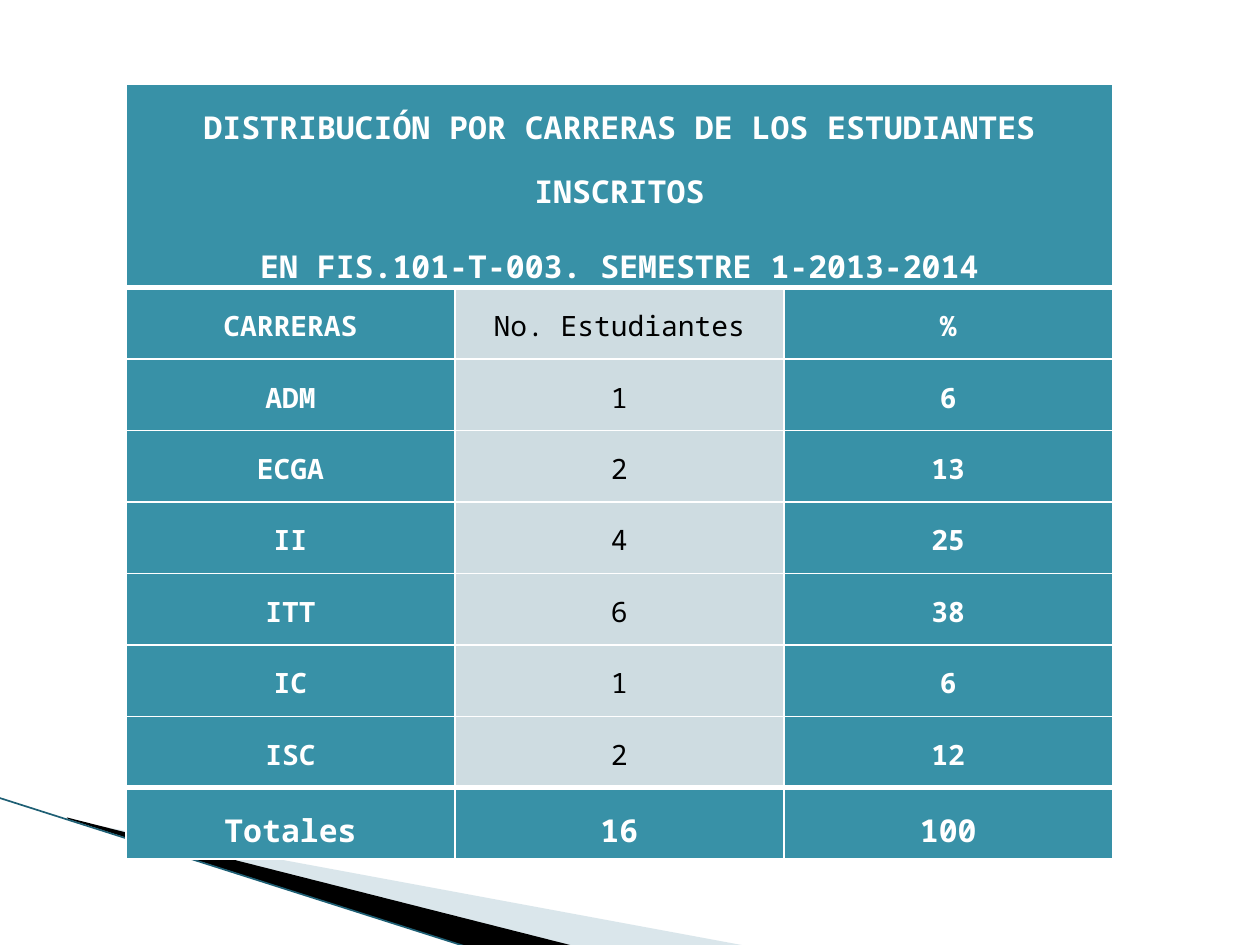
"""Build the slide with the table of enrolled students by degree programme."""
from lxml import etree
from pptx import Presentation
from pptx.dml.color import RGBColor
from pptx.enum.shapes import MSO_CONNECTOR as CONN
from pptx.enum.text import PP_ALIGN as ALIGN
from pptx.oxml.ns import qn
from pptx.util import Cm, Pt

TEAL, PALE, WHITE, BLACK = "3891A7", "CEDCE1", "FFFFFF", "000000"
TITLE = ("DISTRIBUCIÓN POR CARRERAS DE LOS ESTUDIANTES INSCRITOS\n"
         "EN FIS.101-T-003. SEMESTRE 1-2013-2014")
ROWS = [
    (TITLE, "", ""),
    ("CARRERAS", "No. Estudiantes", "%"),
    ("ADM", "1", "6"),
    ("ECGA", "2", "13"),
    ("II", "4", "25"),
    ("ITT", "6", "38"),
    ("IC", "1", "6"),
    ("ISC", "2", "12"),
    ("Totales", "16", "100"),
]
LAST = len(ROWS) - 1
WEDGES = [
    ("A3C2CE", 40, [(140, 1654), (1511, 1908), (1158, 1908), (140, 1651)]),
    (BLACK, 100, [(135, 1648), (1161, 1908), (945, 1910), (137, 1651)]),
]


def rgb(color):
    return RGBColor.from_string(color)


def add_border(cell, side, width):
    ln = etree.SubElement(cell._tc.get_or_add_tcPr(), qn(f"a:{side}"), w=str(Pt(width)))
    fill = etree.SubElement(ln, qn("a:solidFill"))
    etree.SubElement(fill, qn("a:srgbClr"), val=WHITE)


prs = Presentation()
prs.slide_width, prs.slide_height = Cm(25.4), Cm(19.05)
s = prs.slides.add_slide(prs.slide_layouts[6])

for color, alpha, points in WEDGES:
    fb = s.shapes.build_freeform(*points[0], scale=Cm(0.01))
    fb.add_line_segments(points[1:], close=True)
    sp = fb.convert_to_shape()
    sp.shadow.inherit = False
    sp.fill.solid()
    sp.fill.fore_color.rgb = rgb(color)
    sp.line.fill.background()
    if alpha < 100:
        clr = sp._element.spPr.find(".//" + qn("a:srgbClr"))
        etree.SubElement(clr, qn("a:alpha"), val=str(alpha * 1000))

edge = s.shapes.add_connector(CONN.STRAIGHT, Cm(-0.03), Cm(16.08), Cm(9.45), Cm(19.1))
edge.line.color.rgb = rgb("1E5F74")
edge.line.width = Pt(0.95)
etree.SubElement(edge._element.spPr, qn("a:effectLst"))

table = s.shapes.add_table(len(ROWS), 3, Cm(2.54), Cm(1.7), Cm(19.89), Cm(15.02)).table
for col in table.columns:
    col.width = Cm(6.63)
for i, row in enumerate(table.rows):
    row.height = Cm(1.44 if i else 3.5)
table.cell(0, 0).merge(table.cell(0, 2))

for i, texts in enumerate(ROWS):
    for j, text in enumerate(texts):
        cell = table.cell(i, j)
        plain = j == 1 and 0 < i < LAST
        cell.margin_left = cell.margin_right = Cm(0.18)
        cell.margin_top = cell.margin_bottom = 0
        add_border(cell, "lnL", 1)
        add_border(cell, "lnR", 1)
        add_border(cell, "lnT", 3 if i in (1, LAST) else 1)
        add_border(cell, "lnB", 3 if i in (0, LAST - 1) else 1)
        cell.fill.solid()
        cell.fill.fore_color.rgb = rgb(PALE if plain else TEAL)
        cell.text = text
        for p in cell.text_frame.paragraphs:
            p.alignment = ALIGN.CENTER
            p.line_spacing = 1.5
            p.space_after = Pt(6)
            p.font.name = "Noto Sans Mono"
            p.font.size = Pt(18 if i in (0, LAST) else 16)
            p.font.bold = not plain
            p.font.color.rgb = rgb(BLACK if plain else WHITE)

prs.save("out.pptx")
